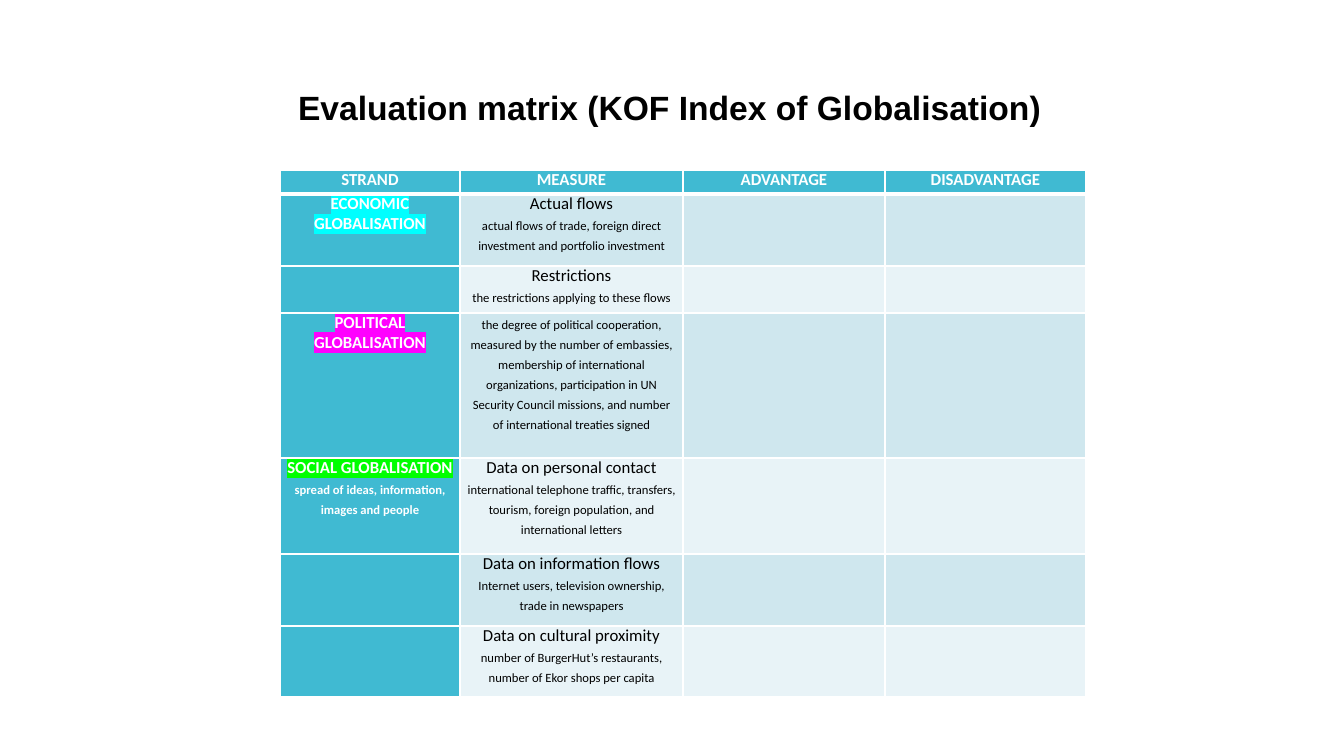
from dataclasses import dataclass

from lxml.etree import SubElement
from pptx import Presentation
from pptx.dml.color import RGBColor
from pptx.enum.text import MSO_ANCHOR, MSO_AUTO_SIZE, PP_ALIGN
from pptx.oxml import parse_xml
from pptx.oxml.ns import nsdecls, qn
from pptx.util import Emu, Pt

WHITE = RGBColor(0xFF, 0xFF, 0xFF)
BLACK = RGBColor(0x00, 0x00, 0x00)
TEAL = RGBColor(0x40, 0xBA, 0xD2)
BAND_DARK = RGBColor(0xCF, 0xE7, 0xEE)
BAND_LIGHT = RGBColor(0xE8, 0xF3, 0xF7)
CYAN = RGBColor(0x00, 0xFF, 0xFF)
MAGENTA = RGBColor(0xFF, 0x00, 0xFF)
GREEN = RGBColor(0x00, 0xFF, 0x00)

SLIDE_WIDTH, SLIDE_HEIGHT = 1344, 756
COLUMN_WIDTHS = (180, 223, 202, 201)
HEADINGS = ("STRAND", "MEASURE", "ADVANTAGE", "DISADVANTAGE")
HEADING_HEIGHT = 24


@dataclass(frozen=True)
class MatrixRow:
    height: int
    measure: str = ""
    detail: str = ""
    strand: str = ""
    strand_detail: str = ""
    highlight: RGBColor | None = None


MATRIX = (
    MatrixRow(72, "Actual flows",
              "actual flows of trade, foreign direct investment and portfolio investment",
              strand="ECONOMIC GLOBALISATION", highlight=CYAN),
    MatrixRow(47, "Restrictions", "the restrictions applying to these flows"),
    MatrixRow(145, detail="the degree of political cooperation, measured by the number of "
              "embassies, membership of international organizations, participation in UN "
              "Security Council missions, and number of international treaties signed",
              strand="POLITICAL GLOBALISATION", highlight=MAGENTA),
    MatrixRow(96, "Data on personal contact",
              "international telephone traffic, transfers, tourism, foreign population, "
              "and international letters",
              strand="SOCIAL GLOBALISATION", highlight=GREEN,
              strand_detail="spread of ideas, information, images and people"),
    MatrixRow(72, "Data on information flows",
              "Internet users, television ownership, trade in newspapers"),
    MatrixRow(71, "Data on cultural proximity",
              "number of BurgerHut’s restaurants, number of Ekor shops per capita"),
)


def px(length: int) -> Emu:
    return Emu(round(length * 12192000 / SLIDE_WIDTH))


def write(frame, text: str, *, size: int = 12, font: str = "Calibri",
          color: RGBColor = BLACK, bold: bool = False, align=PP_ALIGN.CENTER,
          spacing: Pt | None = Pt(14.3), highlight: RGBColor | None = None) -> None:
    """Fill the first free paragraph of a text frame."""
    if not text:
        return
    para = frame.add_paragraph() if frame.text else frame.paragraphs[0]
    para.alignment = align
    if spacing is not None:
        para.line_spacing = spacing
    span = para.add_run()
    span.text = text
    span.font.name = font
    span.font.size = Pt(size)
    span.font.bold = bold
    span.font.color.rgb = color
    if highlight is not None:
        mark = parse_xml(f'<a:highlight {nsdecls("a")}/>')
        SubElement(mark, qn("a:srgbClr"), val=str(highlight))
        span.font.fill  # the fill precedes the highlight in the schema
        span._r.get_or_add_rPr().find(qn("a:solidFill")).addnext(mark)


def style_cell(cell, fill: RGBColor, *, top: int = 1, bottom: int = 1) -> None:
    cell.margin_left = cell.margin_right = px(7)
    cell.margin_top = cell.margin_bottom = 0
    cell.fill.solid()
    cell.fill.fore_color.rgb = fill
    properties = cell._tc.get_or_add_tcPr()
    widths = {"lnL": 1, "lnR": 1, "lnT": top, "lnB": bottom}
    for index, (side, width) in enumerate(widths.items()):
        border = parse_xml(
            f'<a:{side} {nsdecls("a")} w="{Pt(width)}"><a:solidFill>'
            f'<a:srgbClr val="{WHITE}"/></a:solidFill></a:{side}>')
        properties.insert(index, border)


def add_title(page) -> None:
    title = page.shapes.title
    title.left, title.top, title.width, title.height = px(288), px(82), px(1056), px(50)
    title.fill.solid()
    title.fill.fore_color.rgb = WHITE
    frame = title.text_frame
    frame.auto_size = MSO_AUTO_SIZE.NONE
    frame.word_wrap = False
    frame.vertical_anchor = MSO_ANCHOR.MIDDLE
    write(frame, "Evaluation matrix (KOF Index of Globalisation)", size=24,
          font="Arial", bold=True, align=PP_ALIGN.LEFT, spacing=None)


def add_matrix(page) -> None:
    heights = [HEADING_HEIGHT] + [row.height for row in MATRIX]
    table = page.shapes.add_table(
        len(heights), len(COLUMN_WIDTHS), px(280), px(170),
        px(sum(COLUMN_WIDTHS)), px(sum(heights))).table
    table.first_row = table.horz_banding = False
    for column, width in zip(table.columns, COLUMN_WIDTHS):
        column.width = px(width)
    for table_row, height in zip(table.rows, heights):
        table_row.height = px(height)

    # Heading row
    for column, heading in enumerate(HEADINGS):
        cell = table.cell(0, column)
        style_cell(cell, TEAL, bottom=3)
        write(cell.text_frame, heading, color=WHITE, bold=True)

    # Strands, measures and the empty columns to fill in
    for number, row in enumerate(MATRIX, start=1):
        band = BAND_DARK if number % 2 else BAND_LIGHT
        for column in range(len(HEADINGS)):
            style_cell(table.cell(number, column), band if column else TEAL,
                       top=3 if number == 1 else 1)
        strand = table.cell(number, 0).text_frame
        write(strand, row.strand, color=WHITE, bold=True, highlight=row.highlight)
        write(strand, row.strand_detail, size=9, color=WHITE, bold=True)
        measure = table.cell(number, 1).text_frame
        write(measure, row.measure)
        write(measure, row.detail, size=9)


def main() -> None:
    deck = Presentation()
    deck.slide_width, deck.slide_height = px(SLIDE_WIDTH), px(SLIDE_HEIGHT)
    page = deck.slides.add_slide(deck.slide_layouts.get_by_name("Title Only"))
    add_matrix(page)
    add_title(page)
    deck.save("out.pptx")


if __name__ == "__main__":
    main()
